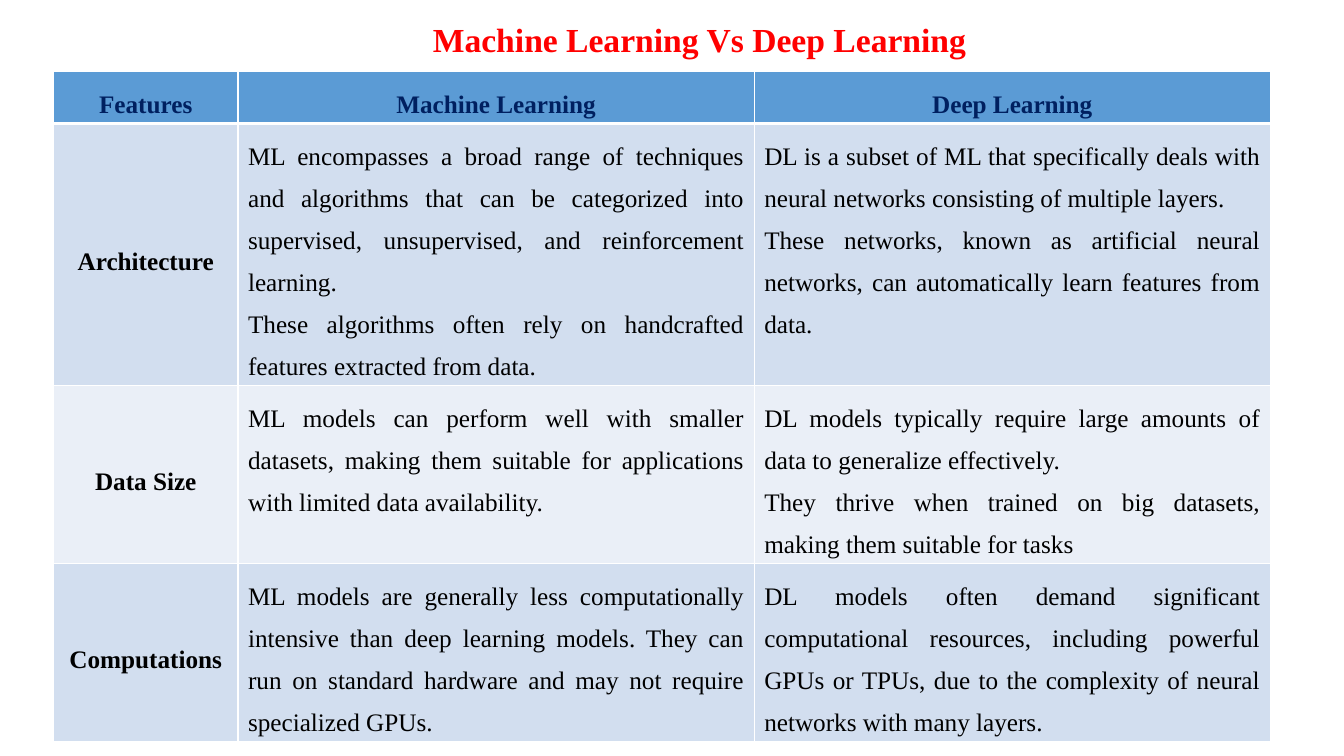
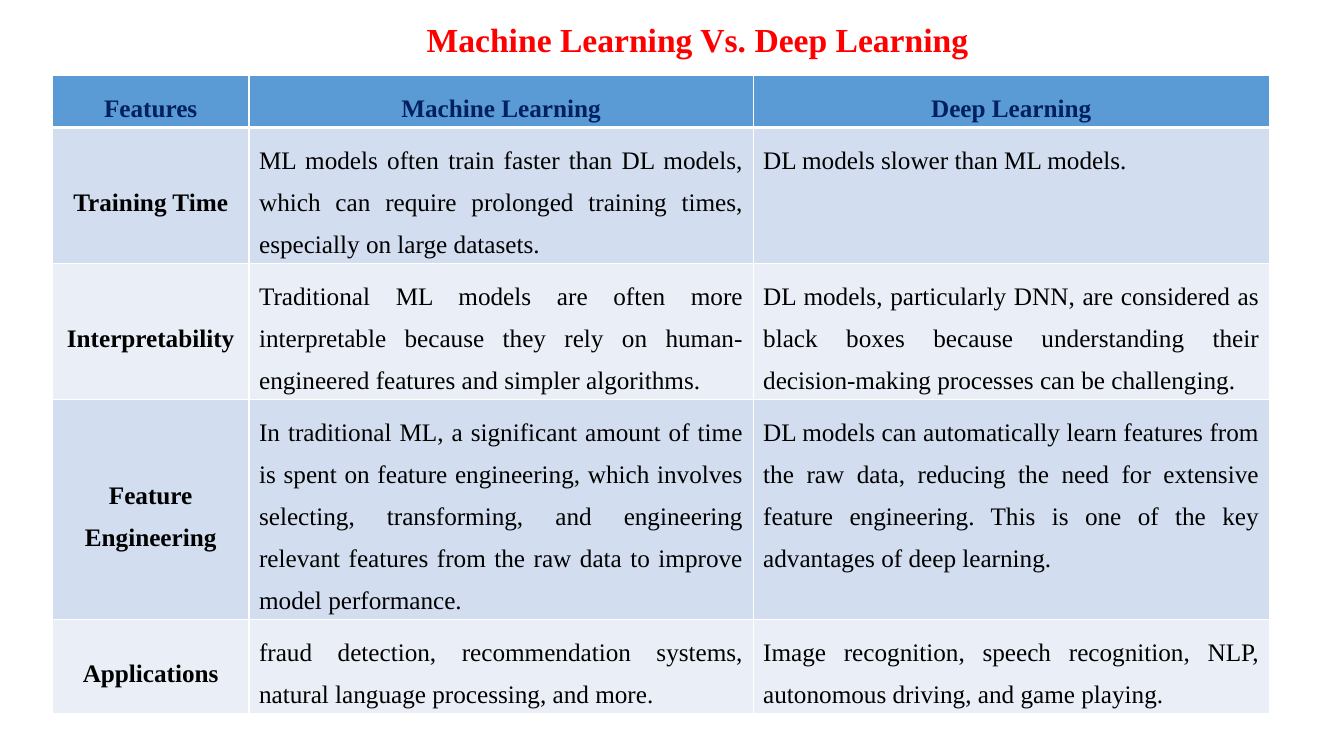
from dataclasses import dataclass

import lxml.etree
import pptx
import pptx.dml.color
import pptx.enum.text
import pptx.oxml.ns
import pptx.util

RGBColor = pptx.dml.color.RGBColor
Align = pptx.enum.text.PP_ALIGN
Anchor = pptx.enum.text.MSO_ANCHOR

RED = RGBColor(0xFF, 0x00, 0x00)
NAVY = RGBColor(0x00, 0x20, 0x60)
BLACK = RGBColor(0x00, 0x00, 0x00)
WHITE = RGBColor(0xFF, 0xFF, 0xFF)
HEADER_BLUE = RGBColor(0x5B, 0x9B, 0xD5)
BANDS = (RGBColor(0xD2, 0xDE, 0xEF), RGBColor(0xEA, 0xEF, 0xF7))

FONT = "Times New Roman"
SLIDE_WIDTH = pptx.util.Inches(13.33)
SLIDE_HEIGHT = pptx.util.Inches(7.5)
BODY_LINE = pptx.util.Pt(30)
ROW_PADDING = pptx.util.Inches(0.1)
THIN, THICK = 1, 3
HEADINGS = ("Features", "Machine Learning", "Deep Learning")


@dataclass(frozen=True)
class Feature:
    name: str
    machine: tuple[str, ...]
    deep: tuple[str, ...]
    lines: int


@dataclass(frozen=True)
class Comparison:
    title: str
    title_left: float
    title_height: float
    table_left: float
    table_top: float
    columns: tuple[float, ...]
    header_height: float
    features: tuple[Feature, ...]


COMPARISONS = (
    Comparison(
        "Machine Learning Vs Deep Learning",
        14.55, 6.53, 3.98, 9.47, (13.73, 38.41, 38.41), 6.67,
        (
            Feature(
                "Architecture",
                ("ML encompasses a broad range of techniques and algorithms that can be "
                 "categorized into supervised, unsupervised, and reinforcement learning.",
                 "These algorithms often rely on handcrafted features extracted from data."),
                ("DL is a subset of ML that specifically deals with neural networks "
                 "consisting of multiple layers.",
                 "These networks, known as artificial neural networks, can automatically "
                 "learn features from data."),
                6,
            ),
            Feature(
                "Data Size",
                ("ML models can perform well with smaller datasets, making them suitable "
                 "for applications with limited data availability.",),
                ("DL models typically require large amounts of data to generalize effectively.",
                 "They thrive when trained on big datasets, making them suitable for tasks"),
                4,
            ),
            Feature(
                "Computations",
                ("ML models are generally less computationally intensive than deep learning "
                 "models. They can run on standard hardware and may not require specialized "
                 "GPUs.",),
                ("DL models often demand significant computational resources, including "
                 "powerful GPUs or TPUs, due to the complexity of neural networks with many "
                 "layers.",),
                4,
            ),
        ),
    ),
    Comparison(
        "Machine Learning Vs. Deep Learning",
        14.4, 7.6, 3.9, 10, (14.63, 37.51, 38.41), 6.27,
        (
            Feature(
                "Training Time",
                ("ML models often train faster than DL models, which can require prolonged "
                 "training times, especially on large datasets.",),
                ("DL models slower than ML models.",),
                3,
            ),
            Feature(
                "Interpretability",
                ("Traditional ML models are often more interpretable because they rely on "
                 "human-engineered features and simpler algorithms.",),
                ("DL models, particularly DNN, are considered as black boxes because "
                 "understanding their decision-making processes can be challenging.",),
                3,
            ),
            Feature(
                "Feature Engineering",
                ("In traditional ML, a significant amount of time is spent on feature "
                 "engineering, which involves selecting, transforming, and engineering "
                 "relevant features from the raw data to improve model performance.",),
                ("DL models can automatically learn features from the raw data, reducing the "
                 "need for extensive feature engineering. This is one of the key advantages "
                 "of deep learning.",),
                5,
            ),
            Feature(
                "Applications",
                ("fraud detection, recommendation systems, natural language processing, "
                 "and more.",),
                ("Image recognition, speech recognition, NLP, autonomous driving, and game "
                 "playing.",),
                2,
            ),
        ),
    ),
)


def across(percent: float) -> int:
    return round(SLIDE_WIDTH * percent / 100)


def down(percent: float) -> int:
    return round(SLIDE_HEIGHT * percent / 100)


def write_text(text_frame, paragraphs, *, size=18, color=BLACK, bold=False,
               align=Align.CENTER, line_spacing=BODY_LINE, space_before=0) -> None:
    for index, text in enumerate(paragraphs):
        paragraph = text_frame.add_paragraph() if index else text_frame.paragraphs[0]
        paragraph.alignment = align
        paragraph.line_spacing = line_spacing
        paragraph.space_before = pptx.util.Pt(space_before)
        run = paragraph.add_run()
        run.text = text
        run.font.name = FONT
        run.font.size = pptx.util.Pt(size)
        run.font.bold = bold
        run.font.color.rgb = color


def style_cell(cell, fill: RGBColor, anchor, top: int = THIN, bottom: int = THIN) -> None:
    qn = pptx.oxml.ns.qn
    properties = cell._tc.get_or_add_tcPr()
    for side, points in (("L", THIN), ("R", THIN), ("T", top), ("B", bottom)):
        line = lxml.etree.SubElement(properties, qn(f"a:ln{side}"), w=str(pptx.util.Pt(points)))
        solid = lxml.etree.SubElement(line, qn("a:solidFill"))
        lxml.etree.SubElement(solid, qn("a:srgbClr"), val=str(WHITE))
    cell.fill.solid()
    cell.fill.fore_color.rgb = fill
    cell.vertical_anchor = anchor


def add_title(slide, comparison: Comparison) -> None:
    title = slide.shapes.title
    title.left, title.top = across(comparison.title_left), down(2.4)
    title.width, title.height = across(75), down(comparison.title_height)
    text_frame = title.text_frame
    text_frame.word_wrap = True
    text_frame.auto_size = pptx.enum.text.MSO_AUTO_SIZE.NONE
    text_frame.vertical_anchor = Anchor.TOP
    write_text(text_frame, (comparison.title,), size=24, color=RED, bold=True,
               line_spacing=0.9, space_before=10)


def add_comparison_table(slide, comparison: Comparison) -> None:
    features = comparison.features
    heights = [down(comparison.header_height)]
    heights += [feature.lines * BODY_LINE + ROW_PADDING for feature in features]
    widths = [across(column) for column in comparison.columns]
    table = slide.shapes.add_table(
        len(heights), len(widths), across(comparison.table_left),
        down(comparison.table_top), sum(widths), sum(heights),
    ).table
    table.horz_banding = False
    for column, width in zip(table.columns, widths):
        column.width = width
    for row, height in zip(table.rows, heights):
        row.height = height

    for cell, heading in zip(table.rows[0].cells, HEADINGS):
        style_cell(cell, HEADER_BLUE, Anchor.MIDDLE, bottom=THICK)
        write_text(cell.text_frame, (heading,), color=NAVY, bold=True, line_spacing=1.5)

    for index, feature in enumerate(features):
        contents = ((feature.name,), feature.machine, feature.deep)
        for column, paragraphs in enumerate(contents):
            cell = table.cell(index + 1, column)
            is_name = column == 0
            style_cell(cell, BANDS[index % 2], Anchor.MIDDLE if is_name else Anchor.TOP,
                       top=THIN if index else THICK)
            write_text(cell.text_frame, paragraphs, bold=is_name,
                       align=Align.CENTER if is_name else Align.JUSTIFY)


def main() -> None:
    presentation = pptx.Presentation()
    presentation.slide_width = SLIDE_WIDTH
    presentation.slide_height = SLIDE_HEIGHT
    title_only = presentation.slide_layouts.get_by_name("Title Only")
    for comparison in COMPARISONS:
        slide = presentation.slides.add_slide(title_only)
        add_title(slide, comparison)
        add_comparison_table(slide, comparison)
    presentation.save("out.pptx")


if __name__ == "__main__":
    main()
